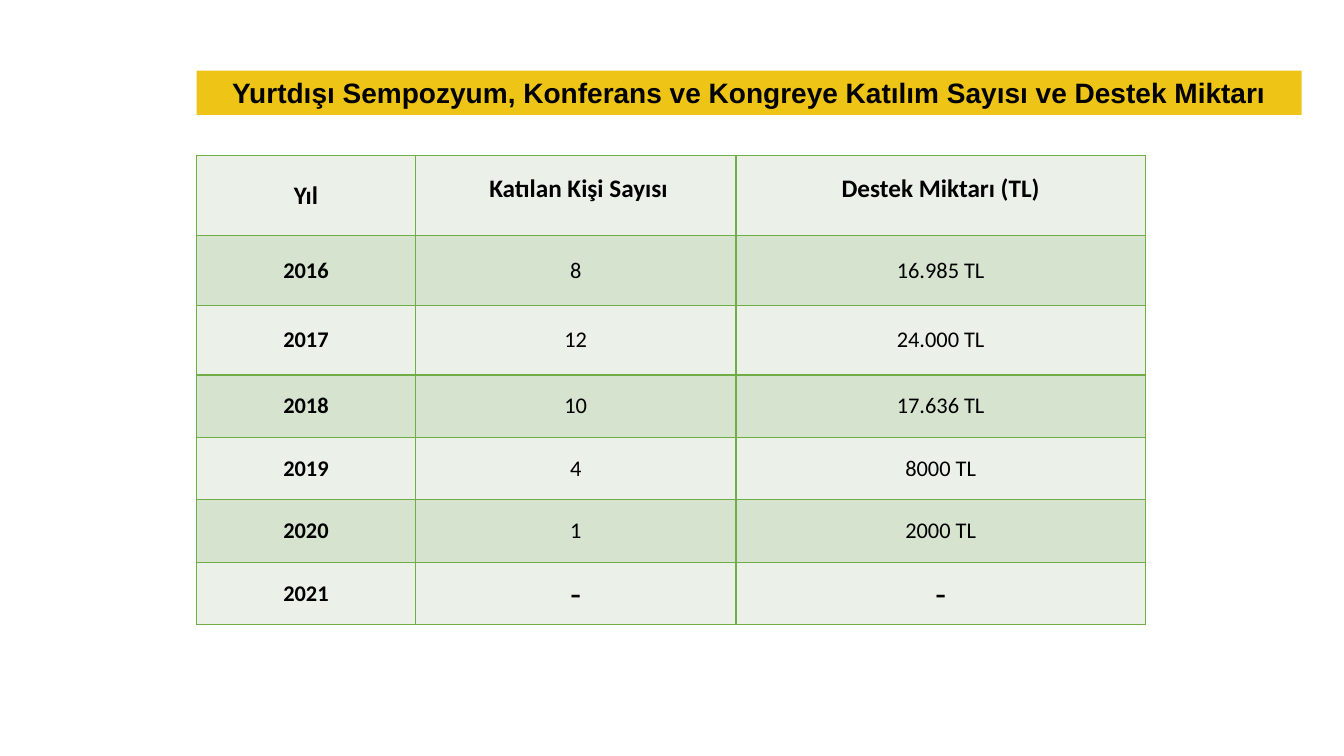
from lxml import etree
from pptx import Presentation
from pptx.dml.color import RGBColor
from pptx.enum.shapes import MSO_SHAPE
from pptx.enum.text import MSO_ANCHOR, PP_ALIGN
from pptx.oxml.ns import qn
from pptx.util import Inches, Pt

RECTANGLE = MSO_SHAPE.RECTANGLE
MIDDLE = MSO_ANCHOR.MIDDLE
CENTER = PP_ALIGN.CENTER

BLACK = RGBColor(0x00, 0x00, 0x00)
GOLD = RGBColor(0xEE, 0xC4, 0x16)
GREEN = RGBColor(0x70, 0xAD, 0x47)
LIGHT_BAND = RGBColor(0xEB, 0xF1, 0xE9)
DARK_BAND = RGBColor(0xD5, 0xE3, 0xCF)

TITLE = "Yurtdışı Sempozyum, Konferans ve Kongreye Katılım Sayısı ve Destek Miktarı"
HEADINGS = ("Yıl", "\u00a0Katılan Kişi Sayısı", "Destek Miktarı (TL)")
SUPPORT_BY_YEAR = [
    ("2016", "8", "16.985 TL"),
    ("2017", "12", "24.000 TL"),
    ("2018", "10", "17.636 TL"),
    ("2019", "4", "8000 TL"),
    ("2020", "1", "2000 TL"),
    ("2021", "-", "-"),
]
COLUMN_WIDTHS = (2.17, 3.18, 4.06)
ROW_HEIGHTS = (0.8, 0.69, 0.69, 0.62, 0.62, 0.62, 0.62)


def write_text(frame, text, font="Calibri", size=16, bold=False, color=BLACK, spacing=None):
    paragraph = frame.paragraphs[0]
    paragraph.alignment = CENTER
    if spacing:
        paragraph.line_spacing = Pt(spacing)
    run = paragraph.add_run()
    run.text = text
    run.font.name = font
    run.font.size = Pt(size)
    run.font.bold = bold
    run.font.color.rgb = color


def cell_format(row, column, text):
    if row == 0:
        return {"size": 18, "bold": True, "spacing": 12 if column else None}
    if text == "-":
        return {"font": "Arial", "size": 24}
    return {"bold": column == 0}


class SupportSlide:
    def __init__(self, slide, border=GREEN, bands=(LIGHT_BAND, DARK_BAND)):
        self.slide = slide
        self.border = border
        self.bands = bands

    def add_banner(self, text, left, top, width, height):
        banner = self.slide.shapes.add_shape(
            RECTANGLE, Inches(left), Inches(top), Inches(width), Inches(height))
        banner.shadow.inherit = False
        banner.fill.solid()
        banner.fill.fore_color.rgb = GOLD
        banner.line.fill.background()
        frame = banner.text_frame
        frame.word_wrap = True
        frame.vertical_anchor = MIDDLE
        write_text(frame, text, font="Arial", size=20, bold=True)

    def add_table(self, rows, left, top, widths, heights):
        table = self.slide.shapes.add_table(
            len(rows), len(widths), Inches(left), Inches(top),
            Inches(sum(widths)), Inches(sum(heights))).table
        for column, width in zip(table.columns, widths):
            column.width = Inches(width)
        for row, height in zip(table.rows, heights):
            row.height = Inches(height)
        for r, values in enumerate(rows):
            for c, value in enumerate(values):
                cell = table.cell(r, c)
                self.style_cell(cell, self.bands[r % 2])
                write_text(cell.text_frame, value, **cell_format(r, c, value))

    def style_cell(self, cell, band):
        cell.vertical_anchor = MIDDLE
        cell.margin_left = cell.margin_right = Inches(0.05)
        cell.margin_top = cell.margin_bottom = 0
        properties = cell._tc.get_or_add_tcPr()
        for side in ("a:lnL", "a:lnR", "a:lnT", "a:lnB"):
            line = etree.SubElement(properties, qn(side), w=str(Pt(1)))
            fill = etree.SubElement(line, qn("a:solidFill"))
            etree.SubElement(fill, qn("a:srgbClr"), val=str(self.border))
        cell.fill.solid()
        cell.fill.fore_color.rgb = band


def main():
    presentation = Presentation()
    presentation.slide_width = Inches(13.33)
    presentation.slide_height = Inches(7.5)
    support = SupportSlide(presentation.slides.add_slide(presentation.slide_layouts[6]))
    support.add_banner(TITLE, 1.95, 0.7, 10.96, 0.44)
    support.add_table([HEADINGS, *SUPPORT_BY_YEAR], 1.95, 1.54, COLUMN_WIDTHS, ROW_HEIGHTS)
    presentation.save("out.pptx")


if __name__ == "__main__":
    main()
